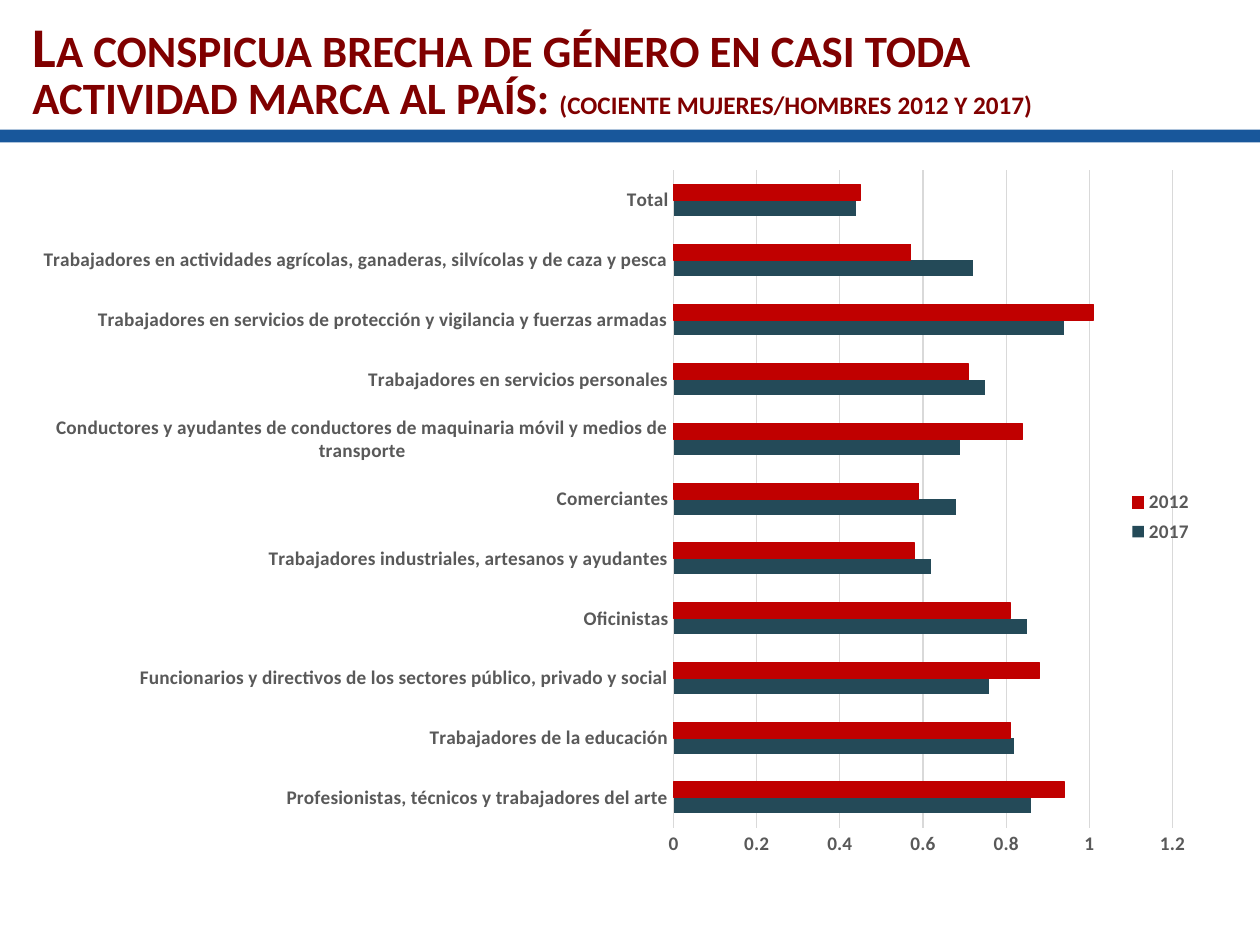
from lxml.etree import SubElement
from pptx import Presentation
from pptx.chart.data import CategoryChartData
from pptx.dml.color import RGBColor
from pptx.enum.chart import XL_CHART_TYPE as ChartType, XL_LEGEND_POSITION as LegendPosition
from pptx.enum.chart import XL_TICK_MARK as TickMark
from pptx.enum.shapes import MSO_SHAPE as Shape
from pptx.enum.text import MSO_ANCHOR as Anchor
from pptx.oxml.ns import qn
from pptx.util import Inches, Pt

ACTIVITY_RATIOS = [  # activity, 2017, 2012 (bottom to top)
    ("Profesionistas, técnicos y trabajadores del arte", 0.86, 0.94),
    ("Trabajadores de la educación", 0.82, 0.81),
    ("Funcionarios y directivos de los sectores público, privado y social", 0.76, 0.88),
    ("Oficinistas", 0.85, 0.81),
    ("Trabajadores industriales, artesanos y ayudantes", 0.62, 0.58),
    ("Comerciantes", 0.68, 0.59),
    ("Conductores y ayudantes de conductores de maquinaria móvil y medios de transporte",
     0.69, 0.84),
    ("Trabajadores en servicios personales", 0.75, 0.71),
    ("Trabajadores en servicios de protección y vigilancia y fuerzas armadas", 0.94, 1.01),
    ("Trabajadores en actividades agrícolas, ganaderas, silvícolas y de caza y pesca",
     0.72, 0.57),
    ("Total", 0.44, 0.45),
]


def color(hex_value):
    return RGBColor.from_string(hex_value)


class SlideBuilder:
    font_name = "Calibri"
    title_color, band_color = "800000", "18579B"
    label_color, grid_color = "595959", "D9D9D9"
    series_colors = ("244A58", "C00000")
    columns, rows = 100, 75  # grid cells of a tenth of an inch

    def __init__(self, presentation):
        self.cell_width = presentation.slide_width / self.columns
        self.cell_height = presentation.slide_height / self.rows
        self.slide = presentation.slides.add_slide(presentation.slide_layouts[6])

    def box(self, column, row, width, height):
        return (int(column * self.cell_width), int(row * self.cell_height),
                int(width * self.cell_width), int(height * self.cell_height))

    def style_font(self, font, size, hex_value):
        font.name, font.size, font.bold = self.font_name, Pt(size), True
        font.color.rgb = color(hex_value)

    def style_line(self, line, hex_value):
        line.color.rgb = color(hex_value)
        line.width = Pt(0.75)

    def band(self, *cells):
        shape = self.slide.shapes.add_shape(Shape.RECTANGLE, *self.box(*cells))
        shape.shadow.inherit = False
        shape.fill.solid()
        shape.fill.fore_color.rgb = color(self.band_color)
        shape.line.fill.background()

    def title(self, parts, *cells):
        frame = self.slide.shapes.add_textbox(*self.box(*cells)).text_frame
        frame.word_wrap = True
        frame.vertical_anchor = Anchor.BOTTOM
        paragraph = frame.paragraphs[0]
        paragraph.line_spacing = 0.7
        for text, size in parts:
            run = paragraph.add_run()
            run.text = text
            self.style_font(run.font, size, self.title_color)
            run._r.get_or_add_rPr().set("cap", "small")

    def place(self, element, x, y, w, h, inner=False):
        """Fix a chart part at shares of the chart's size."""
        for old in element.findall(qn("c:layout")):
            element.remove(old)
        layout = SubElement(element, qn("c:layout"))
        manual = SubElement(layout, qn("c:manualLayout"))
        settings = [("layoutTarget", "inner")] if inner else []
        settings += [("xMode", "edge"), ("yMode", "edge"),
                     ("x", x), ("y", y), ("w", w), ("h", h)]
        for tag, value in settings:
            SubElement(manual, qn(f"c:{tag}")).set("val", str(value))
        return layout

    def bar_chart(self, ratios, *cells):
        activities, *yearly_ratios = zip(*ratios)
        data = CategoryChartData()
        data.categories = activities
        for year, values in zip(("2017", "2012"), yearly_ratios):
            data.add_series(year, values)
        chart = self.slide.shapes.add_chart(
            ChartType.BAR_CLUSTERED, *self.box(*cells), data).chart
        chart.has_title = False
        self.style_font(chart.font, 11, "000000")

        # Bars
        plot = chart.plots[0]
        plot.gap_width, plot.vary_by_categories = 182, False
        for series, hex_value in zip(plot.series, self.series_colors):
            series.format.fill.solid()
            series.format.fill.fore_color.rgb = color(hex_value)
        self.style_line(series.format.line, hex_value)  # only 2012 is outlined

        # Axes
        for axis in (chart.category_axis, chart.value_axis):
            axis.major_tick_mark = axis.minor_tick_mark = TickMark.NONE
            self.style_font(axis.tick_labels.font, 11, self.label_color)
        self.style_line(chart.category_axis.format.line, self.grid_color)
        value_axis = chart.value_axis
        value_axis.minimum_scale, value_axis.maximum_scale = 0, 1.2
        value_axis.major_unit = 0.2
        value_axis.format.line.fill.background()
        self.style_line(value_axis.major_gridlines.format.line, self.grid_color)

        # Legend
        chart.has_legend = True
        legend = chart.legend
        legend.position = LegendPosition.RIGHT
        legend.include_in_layout = True
        self.style_font(legend.font, 11, self.label_color)

        # Fixed places of the plot and the legend
        plot_area = chart._chartSpace.chart.plotArea
        plot_area.insert(0, self.place(plot_area, 0.55, 0.02, 0.42, 0.92, inner=True))
        legend_element = legend._element
        layout = self.place(legend_element, 0.93, 0.46, 0.06, 0.09)
        legend_element.find(qn("c:legendPos")).addnext(layout)


def main():
    presentation = Presentation()
    presentation.slide_width, presentation.slide_height = Inches(10), Inches(7.5)
    builder = SlideBuilder(presentation)
    builder.band(-0.1, 10.3, 100.9, 1)
    builder.title([
        ("La conspicua brecha de género en casi toda actividad marca al país: ", 32),
        ("(cociente mujeres/hombres 2012 y 2017)", 18),
    ], 1.6, 0.8, 89.6, 9.5)
    builder.bar_chart(ACTIVITY_RATIOS, 1.6, 12.4, 94.3, 56.7)
    presentation.save("out.pptx")


if __name__ == "__main__":
    main()
